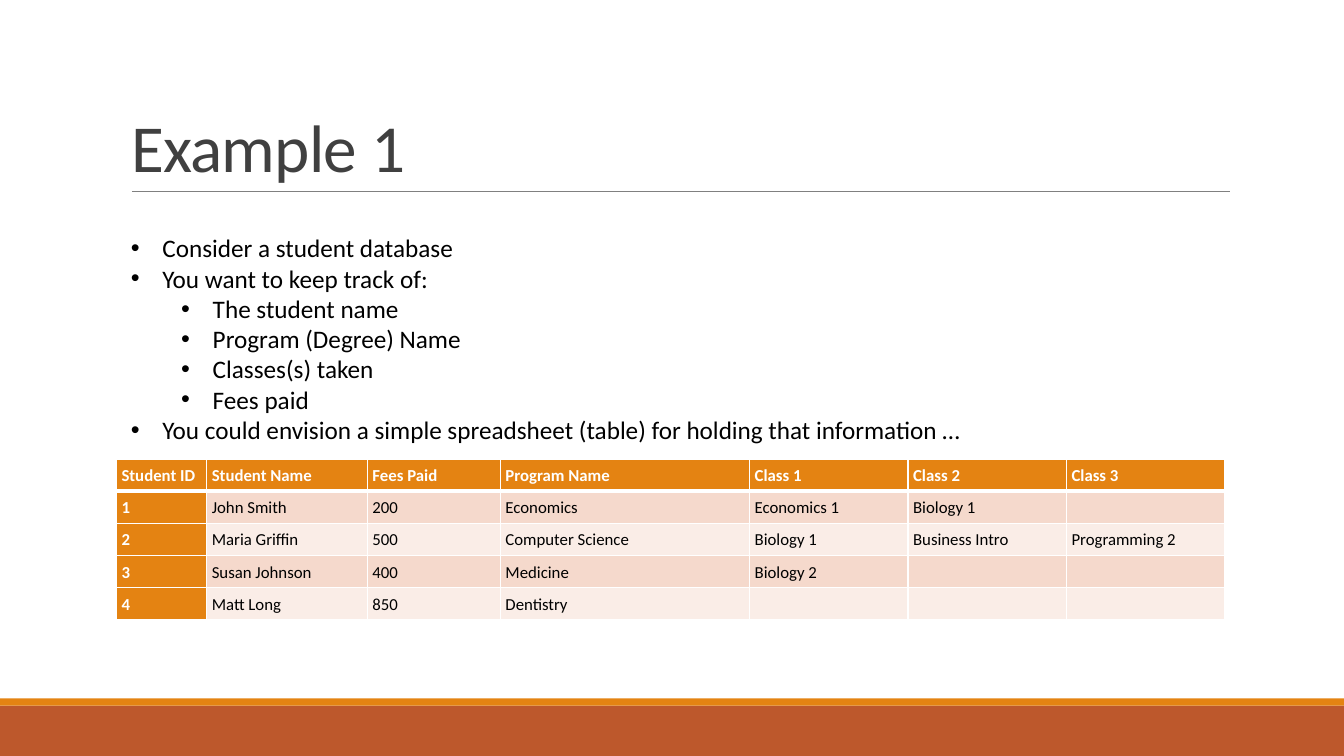
import pptx
import pptx.dml.color
import pptx.enum.shapes
import pptx.enum.text
import pptx.oxml
import pptx.oxml.ns
import pptx.util

Pt = pptx.util.Pt
FONT = "Calibri"
COLORS = {
    "title": "404040",
    "text": "000000",
    "white": "FFFFFF",
    "orange": "E48312",
    "rust": "BD582C",
    "rule": "808080",
    "band_dark": "F5D9CC",
    "band_light": "FAEDE7",
}
BULLETS = [
    (0, "Consider a student database"),
    (0, "You want to keep track of:"),
    (1, "The student name"),
    (1, "Program (Degree) Name"),
    (1, "Classes(s) taken"),
    (1, "Fees paid"),
    (0, "You could envision a simple spreadsheet (table) for holding that information …"),
]
STUDENTS = [
    ["Student ID", "Student Name", "Fees Paid", "Program Name", "Class 1", "Class 2", "Class 3"],
    ["1", "John Smith", "200", "Economics", "Economics 1", "Biology 1", ""],
    ["2", "Maria Griffin", "500", "Computer Science", "Biology 1", "Business Intro", "Programming 2"],
    ["3", "Susan Johnson", "400", "Medicine", "Biology 2", "", ""],
    ["4", "Matt Long", "850", "Dentistry", "", "", ""],
]
COLUMN_WIDTHS = [64.5, 114.8, 95, 178, 113.2, 113.2, 113.2]
ROW_HEIGHT = 23


def color(name):
    return pptx.dml.color.RGBColor.from_string(COLORS[name])


def add_run(paragraph, text, size, color_name, bold=False):
    run = paragraph.add_run()
    run.text = text
    run.font.name = FONT
    run.font.size = Pt(size)
    run.font.bold = bold
    run.font.color.rgb = color(color_name)
    return run


def add_bar(slide, top, height, color_name):
    shape = slide.shapes.add_shape(
        pptx.enum.shapes.MSO_SHAPE.RECTANGLE, 0, Pt(top), Pt(960), Pt(height))
    shape.shadow.inherit = False
    shape.fill.solid()
    shape.fill.fore_color.rgb = color(color_name)
    shape.line.fill.background()


def add_rule(slide, left, right, top):
    connector = slide.shapes.add_connector(
        pptx.enum.shapes.MSO_CONNECTOR.STRAIGHT, Pt(left), Pt(top), Pt(right), Pt(top))
    connector.line.color.rgb = color("rule")
    connector.line.width = Pt(0.5)
    connector._element.spPr.append(pptx.oxml.parse_xml(
        f"<a:effectLst {pptx.oxml.ns.nsdecls('a')}/>"))


def set_title(slide, text):
    title = slide.shapes.title
    title.left, title.top, title.width, title.height = Pt(86.4), Pt(22.3), Pt(792), Pt(114.5)
    title.text_frame.vertical_anchor = pptx.enum.text.MSO_ANCHOR.BOTTOM
    title.text_frame.auto_size = pptx.enum.text.MSO_AUTO_SIZE.NONE
    paragraph = title.text_frame.paragraphs[0]
    paragraph.alignment = pptx.enum.text.PP_ALIGN.LEFT
    paragraph.line_spacing = 0.85
    run = add_run(paragraph, text, 48, "title")
    run._r.get_or_add_rPr().set("spc", "-50")


def add_bullets(slide, items):
    box = slide.shapes.add_textbox(Pt(86.4), Pt(162.7), Pt(784.8), Pt(160))
    frame = box.text_frame
    frame.word_wrap = True
    frame.auto_size = pptx.enum.text.MSO_AUTO_SIZE.SHAPE_TO_FIT_TEXT
    for index, (level, text) in enumerate(items):
        paragraph = frame.add_paragraph() if index else frame.paragraphs[0]
        paragraph.level = level
        add_run(paragraph, text, 18, "text")
        properties = paragraph._p.get_or_add_pPr()
        properties.set("marL", str(Pt(22.5 + 36 * level)))
        properties.set("indent", str(Pt(-22.5)))
        for element in ('buFont typeface="Arial"', 'buChar char="•"'):
            properties.append(pptx.oxml.parse_xml(
                f"<a:{element} {pptx.oxml.ns.nsdecls('a')}/>"))


def set_borders(cell, row):
    widths = {"L": 1, "R": 1, "T": 3 if row == 1 else 1, "B": 3 if row == 0 else 1}
    for side, width in widths.items():
        cell._tc.get_or_add_tcPr().append(pptx.oxml.parse_xml(
            f'<a:ln{side} {pptx.oxml.ns.nsdecls("a")} w="{Pt(width)}"><a:solidFill>'
            f'<a:srgbClr val="{COLORS["white"]}"/></a:solidFill></a:ln{side}>'))


def fill_cell(cell, text, row, column):
    heading = row == 0 or column == 0
    band = "band_dark" if row % 2 else "band_light"
    set_borders(cell, row)
    cell.fill.solid()
    cell.fill.fore_color.rgb = color("orange" if heading else band)
    cell.vertical_anchor = pptx.enum.text.MSO_ANCHOR.MIDDLE
    cell.margin_left = cell.margin_right = cell.margin_top = cell.margin_bottom = Pt(3.6)
    paragraph = cell.text_frame.paragraphs[0]
    paragraph.line_spacing = 1.07
    paragraph.space_after = Pt(18)
    if text:
        add_run(paragraph, text, 12, "white" if heading else "text", heading)
    else:
        paragraph._p.get_or_add_endParaRPr().set("sz", "1200")


def add_student_table(slide, rows):
    frame = slide.shapes.add_table(
        len(rows), len(COLUMN_WIDTHS), Pt(83.2), Pt(327.8),
        Pt(sum(COLUMN_WIDTHS)), Pt(ROW_HEIGHT * len(rows)))
    table = frame.table
    for column, width in zip(table.columns, COLUMN_WIDTHS):
        column.width = Pt(width)
    for row, values in enumerate(rows):
        table.rows[row].height = Pt(ROW_HEIGHT)
        for column, text in enumerate(values):
            fill_cell(table.cell(row, column), text, row, column)


def main():
    presentation = pptx.Presentation()
    presentation.slide_width = Pt(960)
    presentation.slide_height = Pt(540)
    slide = presentation.slides.add_slide(presentation.slide_layouts[5])
    add_bar(slide, 504, 36, "rust")
    add_bar(slide, 498.8, 5.2, "orange")
    add_rule(slide, 94.3, 878.8, 136.8)
    set_title(slide, "Example 1")
    add_student_table(slide, STUDENTS)
    add_bullets(slide, BULLETS)
    presentation.save("out.pptx")


if __name__ == "__main__":
    main()
